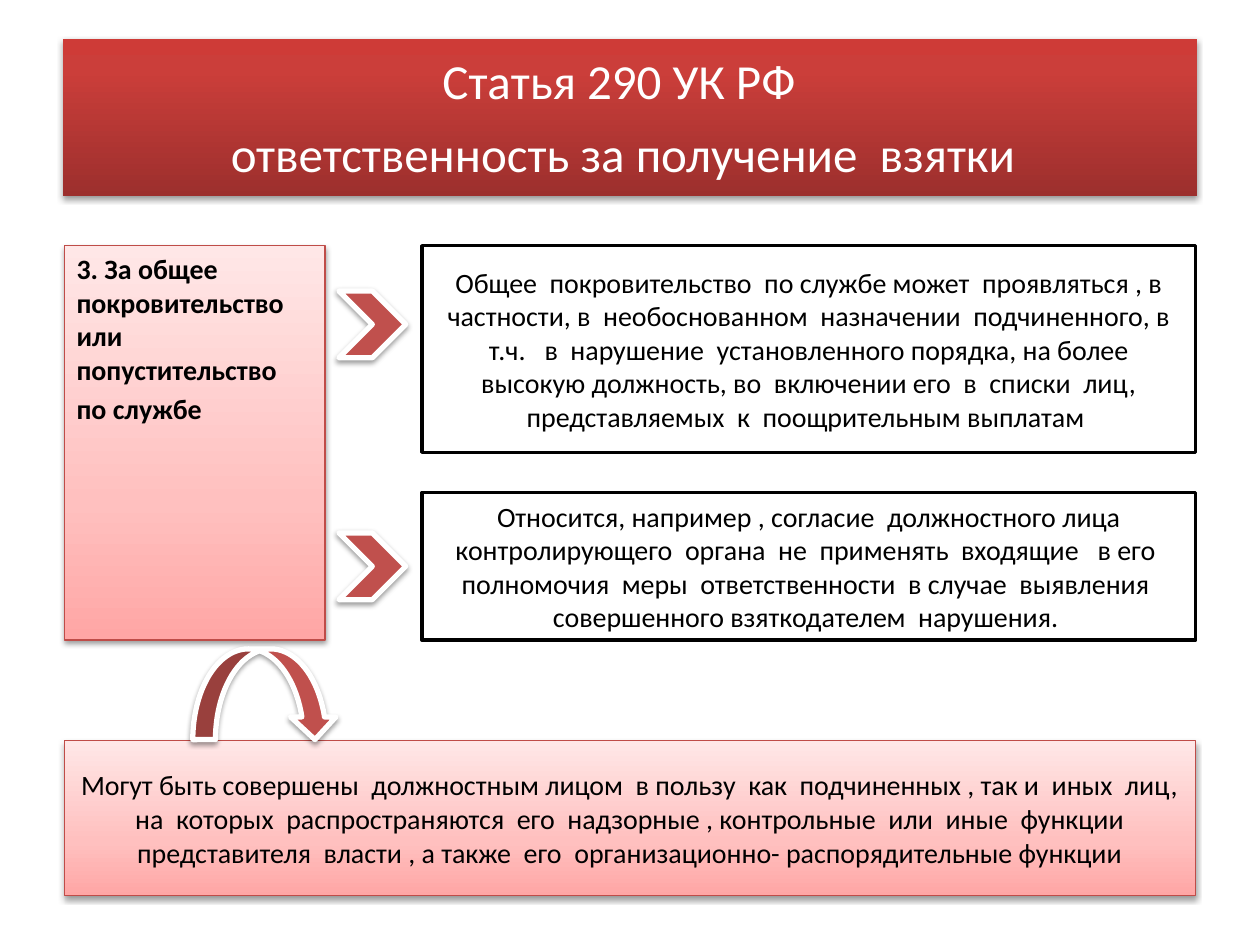
from dataclasses import dataclass

from lxml.etree import SubElement
from pptx import Presentation
from pptx.dml.color import RGBColor
from pptx.enum.shapes import MSO_SHAPE
from pptx.enum.text import MSO_ANCHOR, PP_ALIGN
from pptx.oxml.ns import qn
from pptx.util import Inches, Pt


@dataclass(frozen=True)
class Theme:
    font: str = "Calibri"
    title_size: int = 28
    title_gap_size: int = 36
    body_size: int = 16
    black: str = "000000"
    white: str = "FFFFFF"
    accent: str = "C0504D"
    pink_line: str = "BF4C48"
    red_stops: tuple = ((0, "9C2F2D"), (80, "CB3E3A"), (100, "CE3B37"))
    pink_stops: tuple = ((0, "FFA6A5"), (35, "FFC0BF"), (100, "FFE7E7"))


class SlideBuilder:
    def __init__(self, s, theme):
        self.s = s
        self.theme = theme

    def shape(self, kind, box, fill, line=None, line_width=0, shadow=False):
        """Add a preset shape; fill is a colour or a tuple of gradient stops."""
        sp = self.s.shapes.add_shape(kind, *map(Inches, box))
        if isinstance(fill, str):
            sp.fill.solid()
            sp.fill.fore_color.rgb = RGBColor.from_string(fill)
        else:
            self.gradient(sp, fill)
        if line:
            sp.line.color.rgb = RGBColor.from_string(line)
            sp.line.width = Pt(line_width)
        else:
            sp.line.fill.background()
        sp.shadow.inherit = False
        if shadow:
            self.drop_shadow(sp)
        return sp

    def gradient(self, sp, stops):
        """Fill from bottom to top with any number of (percent, colour) stops."""
        sp.fill.gradient()
        sp.fill.gradient_angle = 90
        gs_list = sp._element.spPr.find(".//" + qn("a:gsLst"))
        for old in list(gs_list):
            gs_list.remove(old)
        for percent, color in stops:
            gs = SubElement(gs_list, qn("a:gs"), pos=str(percent * 1000))
            SubElement(gs, qn("a:srgbClr"), val=color)

    def drop_shadow(self, sp):
        effects = sp._element.spPr.find(qn("a:effectLst"))
        outer = SubElement(effects, qn("a:outerShdw"), blurRad=str(Pt(3.1)),
                           dist=str(Pt(1.6)), dir="5400000", rotWithShape="0")
        color = SubElement(outer, qn("a:srgbClr"), val=self.theme.black)
        SubElement(color, qn("a:alpha"), val="38000")

    def text(self, sp, lines, size, color, bold=False,
             align=PP_ALIGN.CENTER, anchor=MSO_ANCHOR.MIDDLE):
        tf = sp.text_frame
        tf.word_wrap = True
        tf.vertical_anchor = anchor
        tf.text = "\n".join(lines)
        for p in tf.paragraphs:
            p.alignment = align
            p.font.name = self.theme.font
            p.font.size = Pt(size)
            p.font.bold = bold
            p.font.color.rgb = RGBColor.from_string(color)
        return tf

    def title(self, box, text):
        t = self.theme
        sp = self.shape(MSO_SHAPE.RECTANGLE, box, t.red_stops, shadow=True)
        tf = self.text(sp, [text], t.title_size, t.white)
        r = tf.paragraphs[0].add_run()
        r.text = " "
        r.font.size = Pt(t.title_gap_size)

    def pink_panel(self, box, lines, **style):
        t = self.theme
        sp = self.shape(MSO_SHAPE.RECTANGLE, box, t.pink_stops, t.pink_line, 0.75, True)
        return self.text(sp, lines, t.body_size, t.black, **style)

    def framed_box(self, box, text):
        t = self.theme
        sp = self.shape(MSO_SHAPE.RECTANGLE, box, t.white, t.black, 2)
        self.text(sp, [text], t.body_size, t.black)

    def arrow(self, kind, box):
        self.shape(kind, box, self.theme.accent, self.theme.white, 3, True)


def main():
    prs = Presentation()
    prs.slide_width, prs.slide_height = Inches(10), Inches(7.5)
    b = SlideBuilder(prs.slides.add_slide(prs.slide_layouts[6]), Theme())

    b.title((0.5, 0.31, 9, 1.25), "Статья 290 УК РФ  \vответственность за получение  взятки")

    tf = b.pink_panel(
        (0.51, 1.95, 2.07, 3.13),
        ["3. За общее покровительство или попустительство", "по службе"],
        bold=True, align=PP_ALIGN.LEFT, anchor=MSO_ANCHOR.TOP)
    for p in tf.paragraphs:
        p.space_before = Pt(3.2)

    explanations = [
        (1.95, 1.64,
         "Общее  покровительство  по службе может  проявляться , в частности, в  "
         "необоснованном  назначении  подчиненного, в т.ч.   в  нарушение  "
         "установленного порядка, на более высокую должность, во  включении его  в  "
         "списки  лиц, представляемых  к  поощрительным выплатам "),
        (3.91, 1.17,
         "Относится, например , согласие  должностного лица контролирующего  органа  "
         "не  применять  входящие   в его  полномочия  меры  ответственности  в случае  "
         "выявления  совершенного взяткодателем  нарушения. "),
    ]
    for top, height, text in explanations:
        b.framed_box((3.35, top, 6.14, height), text)
    for top in (2.31, 4.23):
        b.arrow(MSO_SHAPE.CHEVRON, (2.69, top, 0.53, 0.53))

    b.pink_panel(
        (0.51, 5.88, 8.98, 1.23),
        ["Могут быть совершены  должностным лицом  в пользу  как  подчиненных , так и  "
         "иных  лиц, на  которых  распространяются  его  надзорные , контрольные  или  "
         "иные  функции представителя  власти , а также  его  организационно- "
         "распорядительные функции"])
    b.arrow(MSO_SHAPE.CURVED_DOWN_ARROW, (1.53, 5.15, 1.15, 0.72))

    prs.save("out.pptx")


if __name__ == "__main__":
    main()
